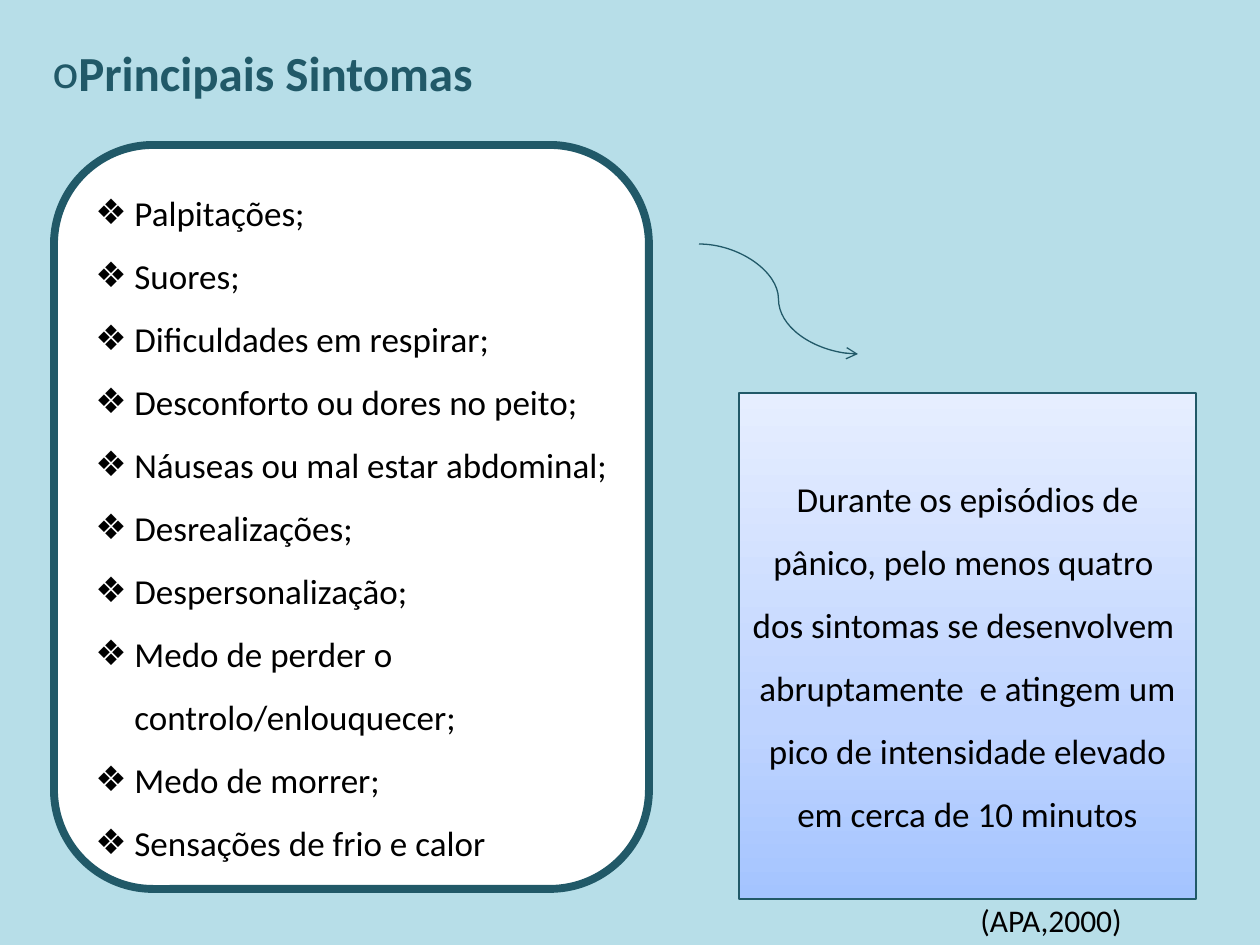
from copy import deepcopy
from dataclasses import dataclass

from pptx import Presentation
from pptx.dml.color import RGBColor as RGB
from pptx.enum.shapes import MSO_CONNECTOR as CONN, MSO_SHAPE as SHAPE
from pptx.enum.text import MSO_ANCHOR as ANCHOR, MSO_AUTO_SIZE as FIT, PP_ALIGN as ALIGN
from pptx.oxml.ns import qn
from pptx.util import Pt
from lxml.etree import SubElement

PX = 914400 / 126


@dataclass
class Theme:
    font: str = "Calibri"
    back: str = "B7DEE8"
    teal: str = "215968"
    white: str = "FFFFFF"
    black: str = "000000"
    gradient: tuple = ((0, "A4C4FF"), (0.35, "BFD4FF"), (1, "E6EEFF"))
    title: int = 28
    body: int = 20
    source: int = 18


def px(*lengths):
    return [round(n * PX) for n in lengths]


def add_run(p, text, size, color, bold=False, bullet=None, indent=0):
    r = p.add_run()
    r.text = text
    r.font.name, r.font.size, r.font.bold = theme.font, Pt(size), bold
    r.font.color.rgb = RGB.from_string(color)
    if bullet:
        pPr = p._p.get_or_add_pPr()
        left, = px(indent)
        pPr.set("marL", str(left))
        pPr.set("indent", str(-left))
        SubElement(pPr, qn("a:buFont")).set("typeface", theme.font)
        SubElement(pPr, qn("a:buChar")).set("char", bullet)


theme = Theme()
teal = RGB.from_string(theme.teal)
prs = Presentation()
prs.slide_width, prs.slide_height = px(1260, 945)
slide = prs.slides.add_slide(prs.slide_layouts[5])
slide.background.fill.solid()
slide.background.fill.fore_color.rgb = RGB.from_string(theme.back)

# Title
title = slide.shapes.title
title.left, title.top, title.width, title.height = px(40, 36, 804, 72)
tf = title.text_frame
tf.auto_size, tf.vertical_anchor = FIT.NONE, ANCHOR.TOP
p = tf.paragraphs[0]
p.alignment = ALIGN.LEFT
add_run(p, "Principais Sintomas", theme.title, theme.teal, bold=True, bullet="o")

# Gradient box about the episodes
sp = slide.shapes.add_shape(SHAPE.RECTANGLE, *px(739, 393, 457, 506))
sp.shadow.inherit = False
sp.fill.gradient()
sp.fill.gradient_angle = 90
stops = sp.fill.gradient_stops
first = stops[0]._gs
first.addnext(deepcopy(first))
for stop, (position, color) in zip(sp.fill.gradient_stops, theme.gradient):
    stop.position = position
    stop.color.rgb = RGB.from_string(color)
sp.line.color.rgb, sp.line.width = teal, Pt(0.75)
tf = sp.text_frame
tf.word_wrap, tf.vertical_anchor = True, ANCHOR.MIDDLE
p = tf.paragraphs[0]
p.alignment, p.line_spacing = ALIGN.CENTER, 1.5
add_run(p, "Durante os episódios de pânico, pelo menos quatro  dos sintomas se "
        "desenvolvem  abruptamente  e atingem um pico de intensidade elevado "
        "em cerca de 10 minutos", theme.body, theme.black)

# Rounded box with the symptom list
sp = slide.shapes.add_shape(SHAPE.ROUNDED_RECTANGLE, *px(54, 145, 595, 744))
sp.shadow.inherit = False
sp.fill.solid()
sp.fill.fore_color.rgb = RGB.from_string(theme.white)
sp.line.color.rgb, sp.line.width = teal, Pt(4.5)
tf = sp.text_frame
tf.word_wrap, tf.vertical_anchor = True, ANCHOR.MIDDLE
symptoms = [
    "Palpitações;",
    "Suores;",
    "Dificuldades em respirar;",
    "Desconforto ou dores no peito;",
    "Náuseas ou mal estar abdominal;",
    "Desrealizações;",
    "Despersonalização;",
    "Medo de perder o controlo/enlouquecer;",
    "Medo de morrer;",
    "Sensações de frio e calor",
]
for i, symptom in enumerate(symptoms):
    p = tf.add_paragraph() if i else tf.paragraphs[0]
    wraps = "/" in symptom
    p.alignment = ALIGN.LEFT if wraps else ALIGN.JUSTIFY
    p.line_spacing = 1.5
    add_run(p, symptom, theme.body, theme.black, bullet="❖", indent=39)

# Curved arrow from the list to the box
arrow = slide.shapes.add_connector(CONN.CURVE, *px(699, 244, 858, 354))
arrow.line.color.rgb, arrow.line.width = teal, Pt(0.75)
SubElement(arrow.line._get_or_add_ln(), qn("a:tailEnd")).set("type", "arrow")
SubElement(arrow._element.spPr, qn("a:effectLst"))

# Source
tf = slide.shapes.add_textbox(*px(968, 895, 258, 50)).text_frame
tf.word_wrap = True
add_run(tf.paragraphs[0], "(APA,2000)", theme.source, theme.black)

prs.save("out.pptx")
